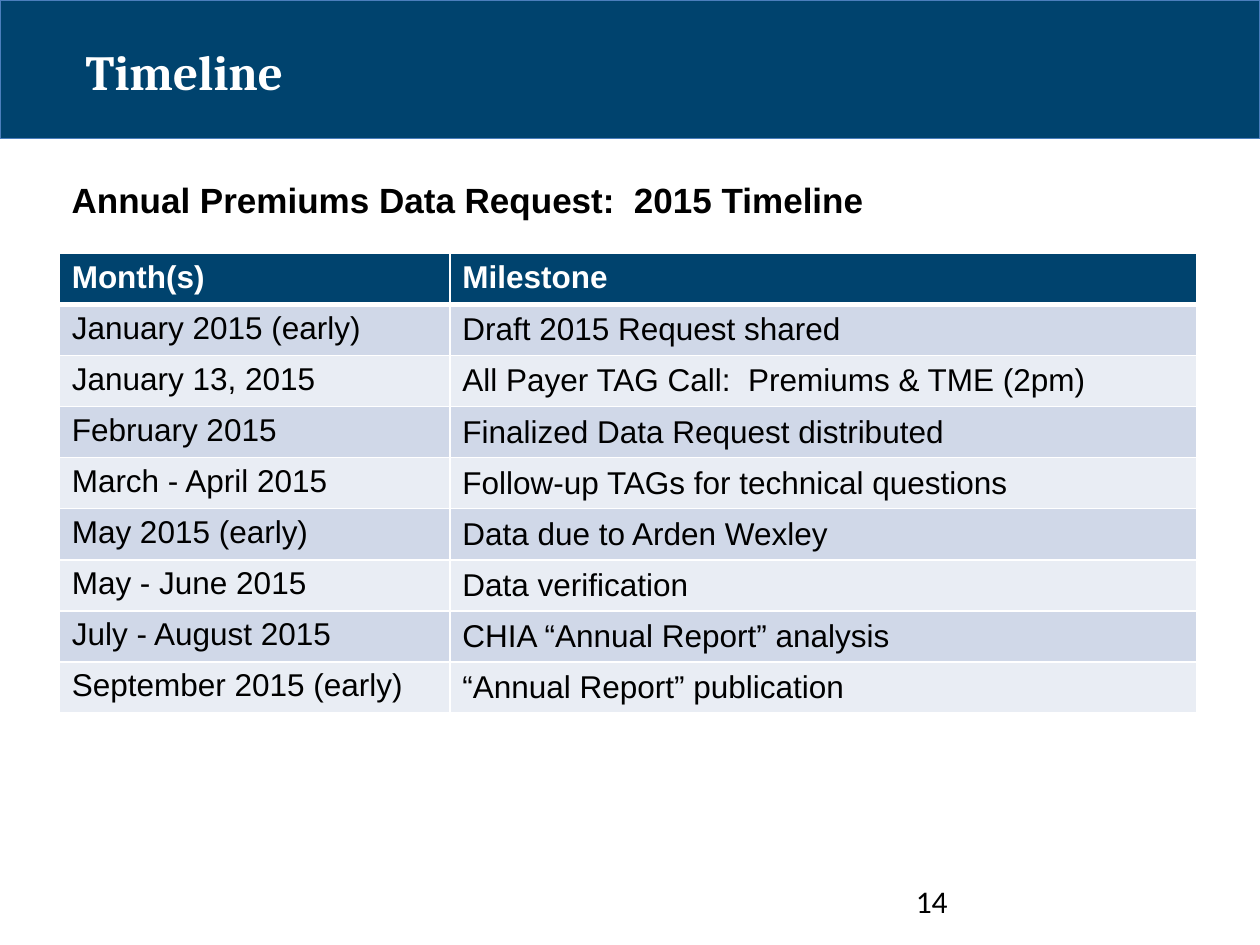
from dataclasses import dataclass

from lxml import etree
from pptx import Presentation
from pptx import util as u
from pptx.dml import color
from pptx.enum import shapes, text
from pptx.oxml import ns


@dataclass(frozen=True)
class Theme:
    navy: str = "00436E"
    edge: str = "4B7EBC"
    dark: str = "D0D8E8"
    light: str = "E9EDF4"
    white: str = "FFFFFF"
    black: str = "000000"
    head: str = "Cambria"
    body: str = "Arial"
    foot: str = "Calibri"
    big: int = 28
    mid: int = 20
    small: int = 18


T = Theme()
ROWS = [
    ("Month(s)", "Milestone"),
    ("January 2015 (early)", "Draft 2015 Request shared"),
    ("January 13, 2015", "All Payer TAG Call:  Premiums & TME (2pm)"),
    ("February 2015", "Finalized Data Request distributed"),
    ("March - April 2015", "Follow-up TAGs for technical questions"),
    ("May 2015 (early)", "Data due to Arden Wexley"),
    ("May - June 2015", "Data verification"),
    ("July - August 2015", "CHIA “Annual Report” analysis"),
    ("September 2015 (early)", "“Annual Report” publication"),
]


def rgb(code):
    return color.RGBColor.from_string(code)


def box(*sides):
    return tuple(u.Inches(side) for side in sides)


def write(frame, words, name, size, tint, bold=False):
    frame.text = words
    para = frame.paragraphs[0]
    para.alignment = text.PP_ALIGN.LEFT
    look = {"name": name, "size": u.Pt(size), "bold": bold}
    for key, value in look.items():
        setattr(para.font, key, value)
    para.font.color.rgb = rgb(tint)


def header(slide, area, spot):
    band = slide.shapes.add_shape(shapes.MSO_SHAPE.RECTANGLE, *area)
    band.shadow.inherit = False
    band.fill.solid()
    band.fill.fore_color.rgb = rgb(T.navy)
    band.line.color.rgb = rgb(T.edge)
    band.line.width = u.Pt(0.75)
    title = slide.shapes.title
    title.element.addprevious(band.element)
    for key, value in zip(("left", "top", "width", "height"), spot):
        setattr(title, key, value)
    frame = title.text_frame
    write(frame, "Timeline", T.head, T.big, T.white, True)
    look = {"auto_size": text.MSO_AUTO_SIZE.NONE,
            "vertical_anchor": text.MSO_ANCHOR.MIDDLE}
    for key, value in look.items():
        setattr(frame, key, value)


def label(slide, area, words, *look):
    frame = slide.shapes.add_textbox(*area).text_frame
    frame.word_wrap = True
    write(frame, words, *look)


def border(cell, low):
    props = cell._tc.get_or_add_tcPr()
    sides = {"lnL": 1, "lnR": 1, "lnT": 1, "lnB": low}
    for spot, (side, width) in enumerate(sides.items()):
        line = etree.Element(ns.qn(f"a:{side}"), w=str(u.Pt(width)))
        fill = etree.SubElement(line, ns.qn("a:solidFill"))
        etree.SubElement(fill, ns.qn("a:srgbClr"), val=T.white)
        props.insert(spot, line)


def grid(slide, area, first):
    left, top, width, height = area
    table = slide.shapes.add_table(len(ROWS), 2, *area).table
    for col, size in zip(table.columns, (first, width - first)):
        col.width = size
    for r, row in enumerate(ROWS):
        table.rows[r].height = height // len(ROWS)
        top_row = r == 0
        shade = T.navy if top_row else (T.light, T.dark)[r % 2]
        tint = T.white if top_row else T.black
        for c, words in enumerate(row):
            cell = table.cell(r, c)
            write(cell.text_frame, words, T.body, T.small, tint, top_row)
            if c and not top_row:
                cell.vertical_anchor = text.MSO_ANCHOR.MIDDLE
            cell.fill.solid()
            cell.fill.fore_color.rgb = rgb(shade)
            border(cell, 3 if top_row else 1)


def main():
    deck = Presentation()
    deck.slide_width, deck.slide_height = box(10, 7.5)
    slide = deck.slides.add_slide(deck.slide_layouts[5])
    header(slide, box(0, 0, 10, 1.1), box(0.58, 0.31, 9.09, 0.5))
    label(slide, box(0.47, 1.37, 8.63, 0.53),
          "Annual Premiums Data Request:  2015 Timeline",
          T.body, T.mid, T.black, True)
    grid(slide, box(0.47, 2.01, 9.03, 3.65), u.Inches(3.1))
    label(slide, box(7.17, 6.95, 2.33, 0.4), "14",
          T.foot, T.small, T.black)
    deck.save("out.pptx")


if __name__ == "__main__":
    main()
